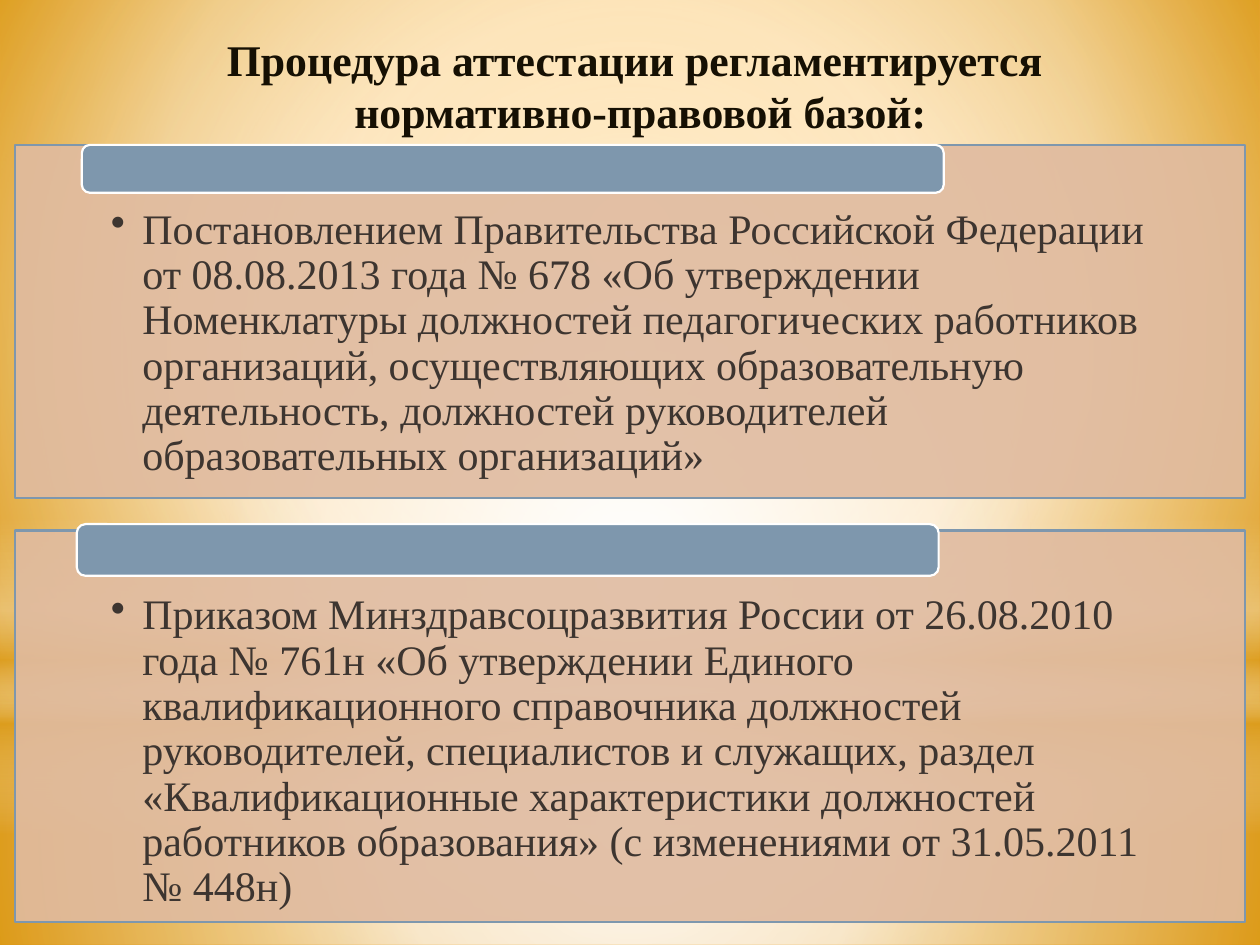
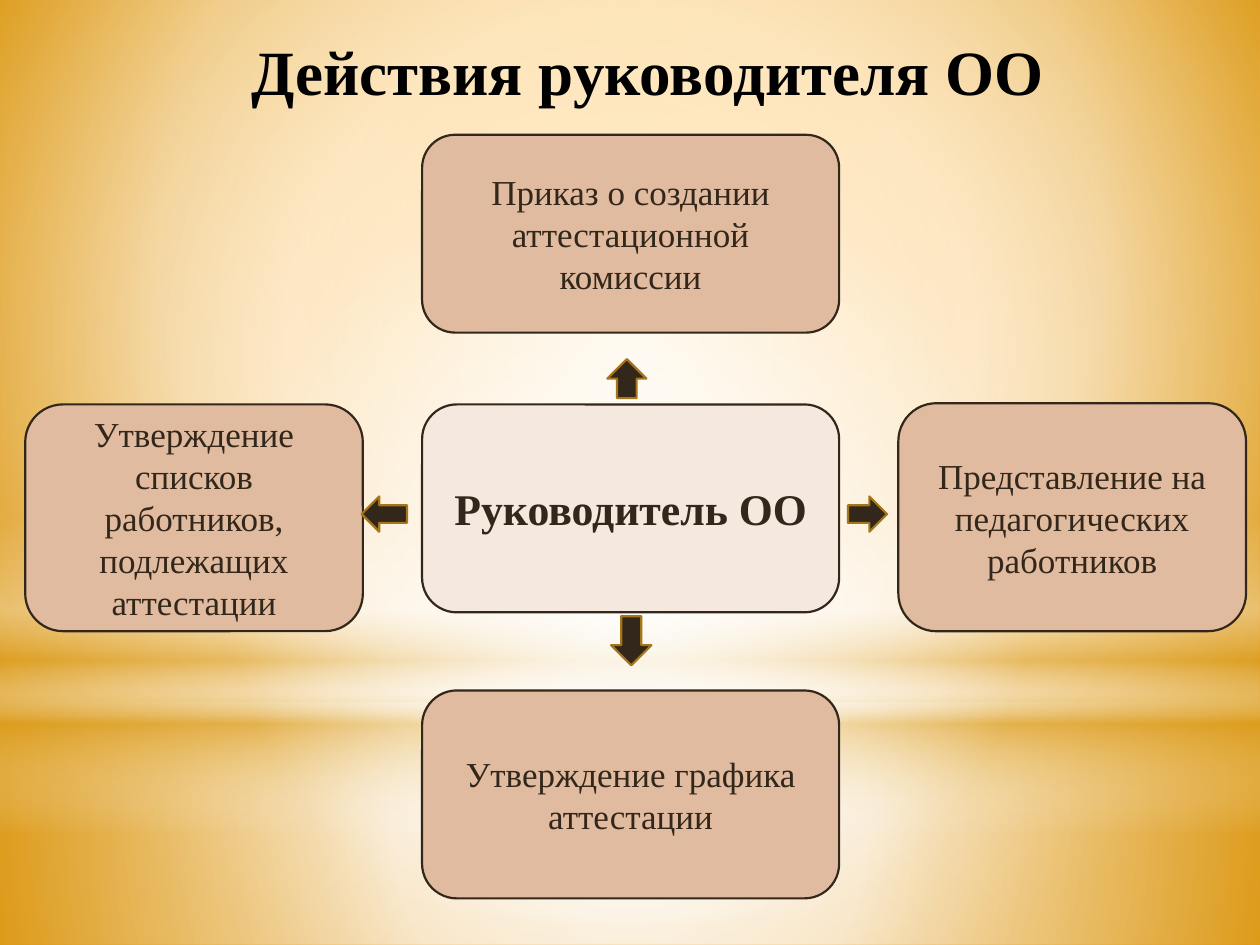
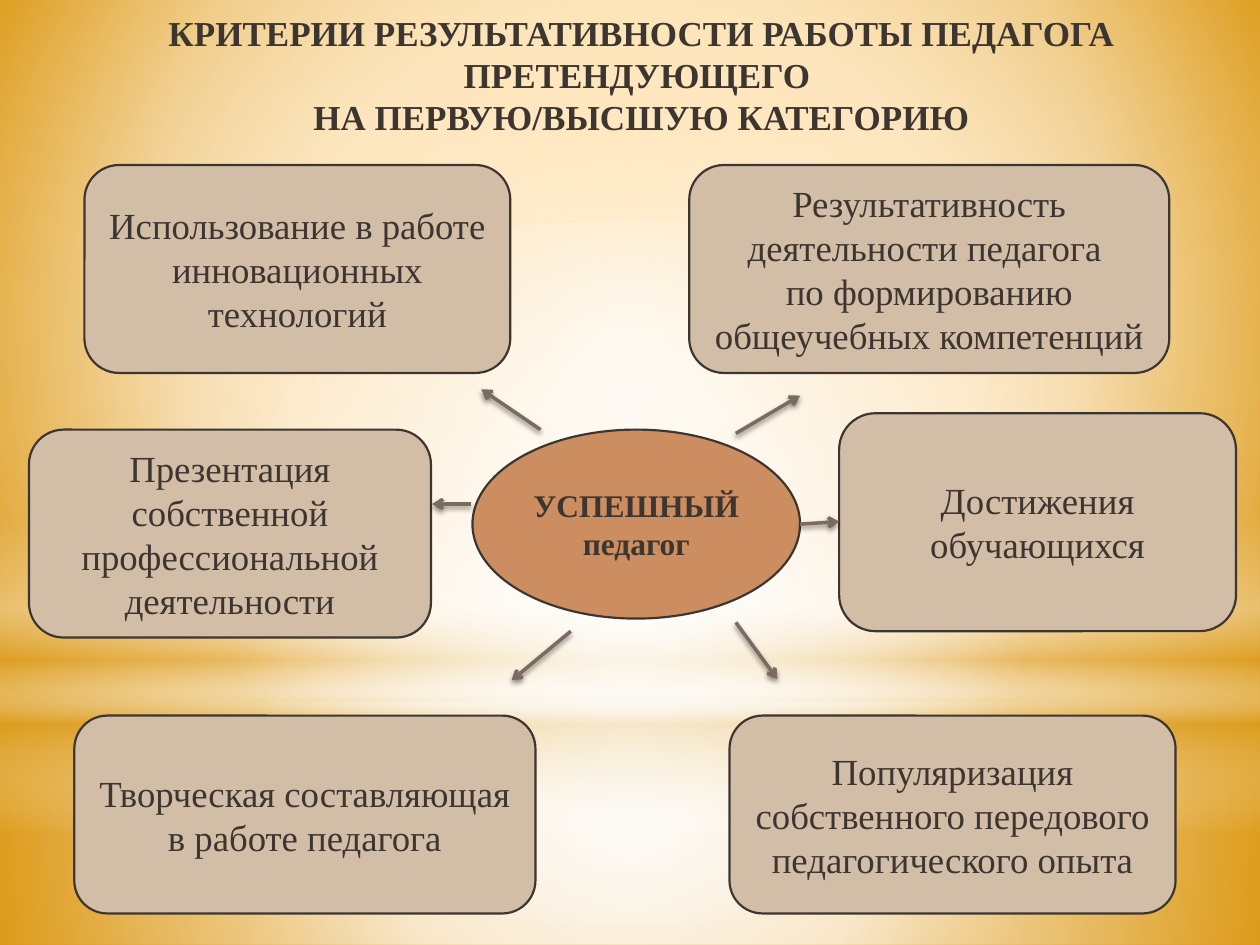
import pptx
import pptx.dml.color
import pptx.enum.shapes
import pptx.enum.text
import pptx.oxml
import pptx.oxml.ns
import pptx.util

SHAPE = pptx.enum.shapes.MSO_SHAPE
ANCHOR = pptx.enum.text.MSO_ANCHOR
ALIGN = pptx.enum.text.PP_ALIGN
qn = pptx.oxml.ns.qn

COLUMNS, ROWS = 100, 75
FONT = "Times New Roman"
WHITE, GOLD, STEEL, PEACH = "FFFFFF", "DC9E1F", "7E97AD", "E0BBA0"
CREAM, SAND, COPPER = "F5E8DF", "D2BEA7", "CC8E60"
INK, BARK, BLACK, TITLE_INK = "3D3530", "32271A", "000000", "161003"
ARROW_EDGE, TAUPE = "A57617", "7A6A60"
CENTRE = (50, 50, 50, 50)


def rgb(value):
    return pptx.dml.color.RGBColor.from_string(value)


def xml(tag, attributes="", content=""):
    namespace = pptx.oxml.ns.nsdecls("a")
    return pptx.oxml.parse_xml(f"<a:{tag} {namespace} {attributes}>{content}</a:{tag}>")


class Deck:
    """Draws styled elements on a grid of 100 columns and 75 rows."""

    def __init__(self):
        self.show = pptx.Presentation()
        self.show.slide_width = pptx.util.Inches(10)
        self.show.slide_height = pptx.util.Inches(7.5)
        self.slide = None

    def new_slide(self):
        self.slide = self.show.slides.add_slide(self.show.slide_layouts[6])

    def point(self, column, row):
        return (round(self.show.slide_width * column / COLUMNS),
                round(self.show.slide_height * row / ROWS))

    def area(self, column, row, width, height):
        return *self.point(column, row), *self.point(width, height)

    def set_text(self, frame, text, size, color, bold=False, align=ALIGN.CENTER):
        frame.word_wrap = True
        frame.text = text
        for paragraph in frame.paragraphs:
            paragraph.alignment = align
            paragraph.font.name = FONT
            paragraph.font.size = pptx.util.Pt(size)
            paragraph.font.bold = bold
            paragraph.font.color.rgb = rgb(color)

    def title(self, place, text, size, color):
        heading = self.slide.shapes.add_textbox(*self.area(*place))
        self.set_text(heading.text_frame, text, size, color, bold=True)

    def block(self, kind, place, fill, edge=None, opacity=100):
        block = self.slide.shapes.add_shape(kind, *self.area(*place))
        block.shadow.inherit = False
        block.fill.solid()
        block.fill.fore_color.rgb = rgb(fill)
        if opacity < 100:
            tint = block.element.spPr.find(qn("a:solidFill"))[0]
            tint.append(xml("alpha", f'val="{opacity * 1000}"'))
        if edge:
            block.line.color.rgb = rgb(edge)
            block.line.width = pptx.util.Pt(1.25)
        else:
            block.line.fill.background()
        return block

    def card(self, place, text, fill, ink, size, bold=False, kind=SHAPE.ROUNDED_RECTANGLE):
        card = self.block(kind, place, fill, ink)
        card.text_frame.vertical_anchor = ANCHOR.MIDDLE
        self.set_text(card.text_frame, text, size, ink, bold)

    def document(self, place, tab, text):
        panel = self.block(SHAPE.RECTANGLE, place, PEACH, STEEL, 90)
        frame = panel.text_frame
        frame.vertical_anchor = ANCHOR.TOP
        frame.margin_left = frame.margin_right = pptx.util.Inches(0.76)
        frame.margin_top = pptx.util.Inches(0.5)
        frame.margin_bottom = pptx.util.Inches(0.19)
        self.set_text(frame, text, 24, INK, align=ALIGN.LEFT)
        frame.paragraphs[0].line_spacing = 0.9
        indent = pptx.util.Inches(0.25)
        properties = next(panel.element.iter(qn("a:pPr")))
        properties.set("marL", str(indent))
        properties.set("indent", str(-indent))
        properties.find(qn("a:defRPr")).addprevious(xml("buChar", 'char="•"'))
        self.block(SHAPE.ROUNDED_RECTANGLE, tab, STEEL, WHITE)

    def ray(self, start, end):
        ray = self.slide.shapes.add_connector(
            pptx.enum.shapes.MSO_CONNECTOR.STRAIGHT, *self.point(*start), *self.point(*end))
        ray.line.color.rgb = rgb(TAUPE)
        ray.line.width = pptx.util.Pt(2)
        properties = ray.element.spPr
        properties.find(qn("a:ln")).append(xml("tailEnd", 'type="arrow"'))
        properties.append(xml("effectLst", content=(
            f'<a:outerShdw blurRad="{pptx.util.Pt(3.1)}" dist="{pptx.util.Pt(1.8)}" '
            'dir="5400000" rotWithShape="0">'
            f'<a:srgbClr val="{BLACK}"><a:alpha val="45000"/></a:srgbClr></a:outerShdw>')))

    def gradient(self, holder, stops, focus=None):
        colors = "".join(
            f'<a:gs pos="{position * 1000}"><a:srgbClr val="{color}">'
            f'<a:alpha val="{opacity * 1000}"/></a:srgbClr></a:gs>'
            for position, color, opacity in stops)
        if focus:
            sides = " ".join(f'{side}="{share * 1000}"' for side, share in zip("ltrb", focus))
            course = f'<a:path path="circle"><a:fillToRect {sides}/></a:path>'
        else:
            course = '<a:lin ang="5400000" scaled="0"/>'
        fill = xml("gradFill", 'rotWithShape="1"', f"<a:gsLst>{colors}</a:gsLst>{course}")
        holder.replace(holder.find(qn("a:solidFill")), fill)

    def backdrop(self, layers):
        master = self.show.slide_master
        master.background.fill.solid()
        self.gradient(next(master.element.iter(qn("p:bgPr"))),
                      [(0, "FFA607", 100), (60, "F9CD88", 100), (100, "E08E02", 100)],
                      (20, 10, 20, 60))
        for kind, place, stops, focus in layers:
            layer = self.block(kind, place, WHITE)
            self.gradient(layer.element.spPr, stops, focus)
            master.shapes.element.append(layer.element)


def regulations(deck):
    deck.new_slide()
    deck.title((12.2, 2.1, 77.2, 9.4),
               "Процедура аттестации регламентируется \nнормативно-правовой базой:", 25, TITLE_INK)
    deck.document((1.2, 11.5, 97.6, 28), (6.5, 11.5, 68.4, 3.8),
                  "Постановлением Правительства Российской Федерации от 08.08.2013 года № 678 "
                  "«Об утверждении Номенклатуры должностей педагогических работников организаций, "
                  "осуществляющих образовательную деятельность, должностей руководителей "
                  "образовательных организаций»")
    deck.document((1.2, 42.1, 97.6, 31.1), (6.1, 41.6, 68.4, 4.1),
                  "Приказом Минздравсоцразвития России от 26.08.2010 года № 761н «Об утверждении "
                  "Единого квалификационного справочника должностей руководителей, специалистов "
                  "и служащих, раздел «Квалификационные характеристики должностей работников "
                  "образования» (с изменениями от 31.05.2011 № 448н)")


def head_actions(deck):
    deck.new_slide()
    deck.title((6.4, 2.1, 90, 6.3), "Действия руководителя ОО", 36, BLACK)
    deck.card((33.5, 32.1, 33.1, 16.5), "Руководитель ОО", CREAM, BARK, 25, bold=True)
    for place, action in (
            ((33.5, 10.7, 33.1, 15.7), "Приказ о создании аттестационной комиссии"),
            ((2, 32.1, 26.8, 18), "Утверждение списков работников, подлежащих аттестации"),
            ((71.3, 32, 27.6, 18.1), "Представление на педагогических работников"),
            ((33.5, 54.8, 33.1, 16.5), "Утверждение графика аттестации")):
        deck.card(place, action, PEACH, BARK, 20)
    for direction, place in (
            (SHAPE.UP_ARROW, (48.2, 28.5, 3.1, 3.1)),
            (SHAPE.DOWN_ARROW, (48.5, 48.9, 3.2, 3.9)),
            (SHAPE.RIGHT_ARROW, (67.3, 39.4, 3.1, 2.8)),
            (SHAPE.LEFT_ARROW, (28.7, 39.4, 3.6, 2.8))):
        deck.block(direction, place, BARK, ARROW_EDGE)


def teacher_criteria(deck):
    deck.new_slide()
    deck.title((5.9, 0.4, 90, 9.9),
               "КРИТЕРИИ РЕЗУЛЬТАТИВНОСТИ РАБОТЫ ПЕДАГОГА ПРЕТЕНДУЮЩЕГО \v"
               "НА ПЕРВУЮ/ВЫСШУЮ КАТЕГОРИЮ", 20, INK)
    deck.card((37.5, 34.1, 26, 15), "УСПЕШНЫЙ педагог", COPPER, INK, 18, True, SHAPE.OVAL)
    for place, criterion in (
            ((6.7, 13.1, 33.8, 16.5), "Использование в работе инновационных технологий"),
            ((2.3, 34.1, 31.9, 16.5), "Презентация собственной профессиональной деятельности"),
            ((5.9, 56.8, 36.6, 15.7), "Творческая составляющая в работе педагога"),
            ((54.7, 13.1, 38.1, 16.5), "Результативность деятельности педагога \n"
                                       "по формированию общеучебных компетенций"),
            ((66.6, 32.8, 31.5, 17.3), "Достижения обучающихся"),
            ((57.9, 56.8, 35.4, 15.7),
             "Популяризация собственного передового педагогического опыта")):
        deck.card(place, criterion, SAND, INK, 21)
    for start, end in (
            ((45.3, 50.1), (40.6, 54)), ((58.4, 49.4), (61.7, 53.9)),
            ((37.4, 40), (34.3, 40)), ((63.5, 41.6), (66.6, 41.4)),
            ((42.9, 34.1), (38.2, 30.9)), ((58.4, 34.4), (63.5, 31.4))):
        deck.ray(start, end)


def main():
    deck = Deck()
    regulations(deck)
    head_actions(deck)
    teacher_criteria(deck)
    deck.backdrop((
        (SHAPE.RECTANGLE, (0, 55.8, 100, 19.2),
         [(0, WHITE, 91), (37, WHITE, 76), (100, GOLD, 79)], CENTRE),
        (SHAPE.RECTANGLE, (0, 0, 100, 55.8),
         [(0, WHITE, 89), (48, WHITE, 62), (100, GOLD, 79)], CENTRE),
        (SHAPE.RECTANGLE, (0, 41.2, 100, 25),
         [(0, WHITE, 0), (29, WHITE, 30), (45, GOLD, 40),
          (55, WHITE, 26), (65, GOLD, 60), (100, WHITE, 0)], None),
        (SHAPE.OVAL, (0, 17.5, 100, 55.8), [(0, WHITE, 100), (56, WHITE, 0)], CENTRE)))
    deck.show.save("out.pptx")


if __name__ == "__main__":
    main()
